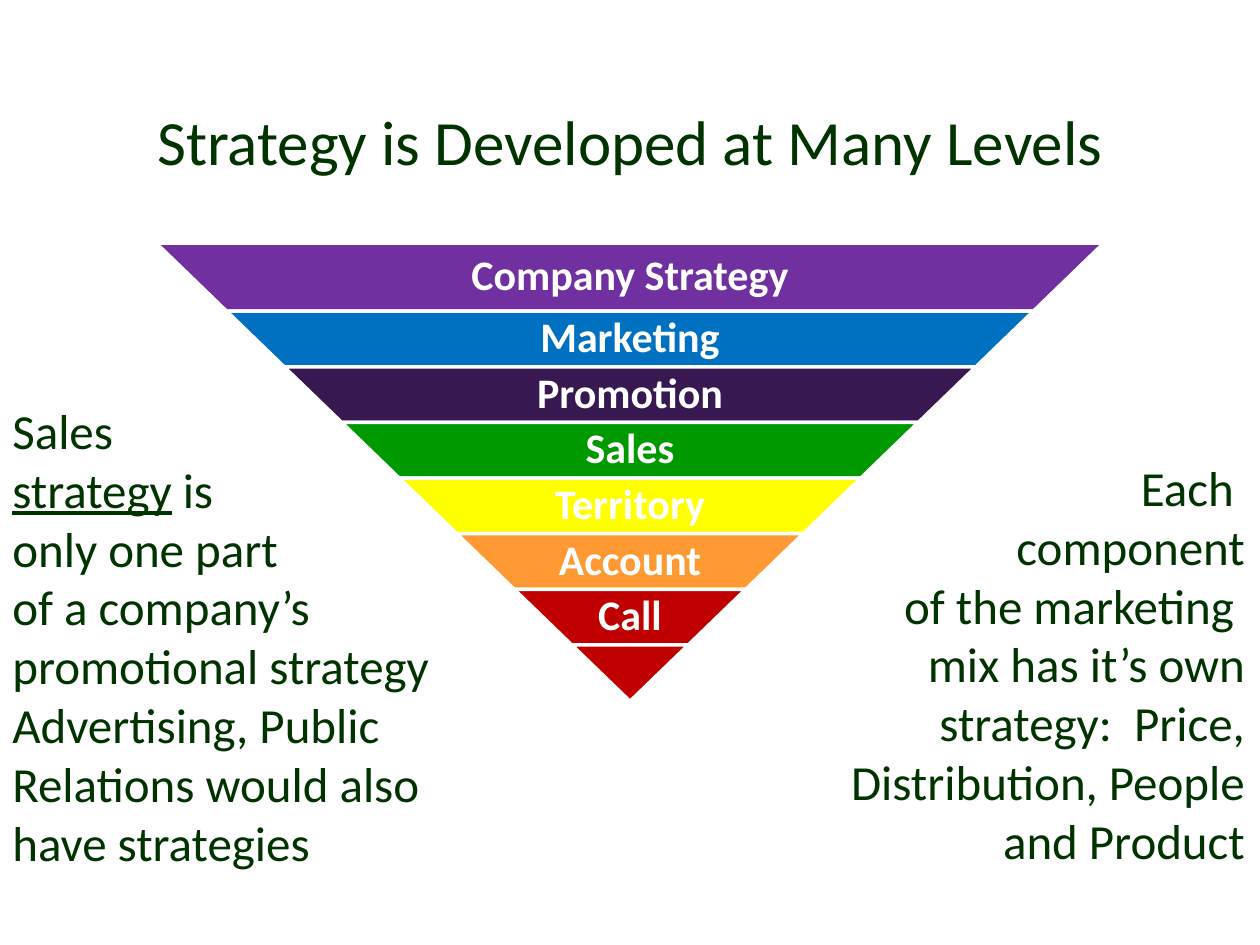
from typing import NamedTuple

from pptx import Presentation
from pptx.dml.color import RGBColor
from pptx.enum.shapes import MSO_SHAPE as Shape
from pptx.enum.text import MSO_ANCHOR as Anchor, MSO_AUTO_SIZE as AutoSize, PP_ALIGN as Align
from pptx.util import Inches, Pt

SLIDE_W, SLIDE_H = 10, 7.5
FONT, INK, WHITE = "Calibri", "003300", "FFFFFF"
FUNNEL_TOP, FIRST_H, FUNNEL_BOTTOM = 1.93, 0.54, 5.56
FUNNEL_W, SLOPE, LABEL_SHARE = 7.52, 1.034, 0.65


class Layer(NamedTuple):
    label: str
    fill: str


class Run(NamedTuple):
    text: str
    underline: bool = False


LAYERS = [
    Layer("Company Strategy", "7030A0"),
    Layer("Marketing", "0070C0"),
    Layer("Promotion", "381850"),
    Layer("Sales", "009900"),
    Layer("Territory", "FFFF00"),
    Layer("Account", "FF9933"),
    Layer("Call", "C00000"),
    Layer("", "C00000"),
]
SALES_NOTE = [
    [Run("Sales")],
    [Run("strategy", underline=True), Run(" is")],
    [Run("only one part")],
    [Run("of a company’s promotional strategy")],
    [Run("Advertising, Public Relations would also have strategies")],
]
MIX_NOTE = [
    [Run("Each ")],
    [Run("component")],
    [Run("of the marketing ")],
    [Run("mix has it’s own strategy:  Price, Distribution, People and Product")],
]


def rgb(value: str) -> RGBColor:
    return RGBColor.from_string(value)


def place(sp, left: float, top: float, width: float, height: float) -> None:
    sp.left, sp.top = Inches(left), Inches(top)
    sp.width, sp.height = Inches(width), Inches(height)


def write(sp, paragraphs: list[list[Run]], *, size=28, color=INK, bold=False,
          align=Align.LEFT, anchor=Anchor.MIDDLE, spacing=1.0, inset=None) -> None:
    tf = sp.text_frame
    tf.word_wrap, tf.auto_size, tf.vertical_anchor = True, AutoSize.NONE, anchor
    if inset is not None:
        tf.margin_left = tf.margin_right = tf.margin_top = tf.margin_bottom = Inches(inset)
    for i, runs in enumerate(paragraphs):
        p = tf.paragraphs[0] if i == 0 else tf.add_paragraph()
        p.alignment, p.line_spacing = align, spacing
        p.space_before = p.space_after = Pt(0)
        for text, underline in runs:
            r = p.add_run()
            r.text = text
            font = r.font
            font.name, font.size, font.bold = FONT, Pt(size), bold
            font.underline, font.color.rgb = underline, rgb(color)


def remove_bullets(sp) -> None:
    for p in sp.text_frame.paragraphs:
        pPr = p._p.get_or_add_pPr()
        pPr.set("marL", "0")
        pPr.set("indent", "0")
        bullet = pPr.makeelement(
            "{http://schemas.openxmlformats.org/drawingml/2006/main}buNone", {})
        pPr.append(bullet)


def add_layer(shapes, layer: Layer, top: float, width: float, height: float) -> None:
    sp = shapes.add_shape(Shape.TRAPEZOID, 0, 0, 0, 0)
    place(sp, (SLIDE_W - width) / 2, top, width, height)
    sp.rotation = 180
    sp.adjustments[0] = SLOPE
    sp.shadow.inherit = False
    sp.fill.solid()
    sp.fill.fore_color.rgb = rgb(layer.fill)
    sp.line.color.rgb = rgb(WHITE)
    sp.line.width = Pt(2)
    if layer.label:
        label = shapes.add_textbox(0, 0, 0, 0)
        label_w = width * LABEL_SHARE
        place(label, (SLIDE_W - label_w) / 2, top, label_w, height)
        write(label, [[Run(layer.label)]], size=24, color=WHITE, bold=True,
              align=Align.CENTER, spacing=0.9, inset=0.03)


def add_funnel(shapes) -> None:
    """Stack the layers so that each starts as wide as the one above ends."""
    row_h = (FUNNEL_BOTTOM - FUNNEL_TOP - FIRST_H) / (len(LAYERS) - 1)
    top, width = FUNNEL_TOP, FUNNEL_W
    for i, layer in enumerate(LAYERS):
        height = row_h if i else FIRST_H
        add_layer(shapes, layer, top, width, height)
        top += height
        width -= 2 * SLOPE * height


def main() -> None:
    prs = Presentation()
    prs.slide_width, prs.slide_height = Inches(SLIDE_W), Inches(SLIDE_H)
    s = prs.slides.add_slide(prs.slide_layouts[1])
    title, body = s.placeholders

    place(title, 0.69, 0.39, 8.62, 1.45)
    write(title, [[Run("Strategy is Developed at Many Levels")]], size=36, align=Align.CENTER)

    place(body, 6.06, 3.58, 3.92, 3.75)
    write(body, MIX_NOTE, align=Align.RIGHT, anchor=Anchor.TOP)
    remove_bullets(body)

    add_funnel(s.shapes.add_group_shape().shapes)

    note = s.shapes.add_textbox(0, 0, 0, 0)
    place(note, 0, 2.92, 4.17, 4.25)
    write(note, SALES_NOTE)

    prs.save("out.pptx")


if __name__ == "__main__":
    main()
